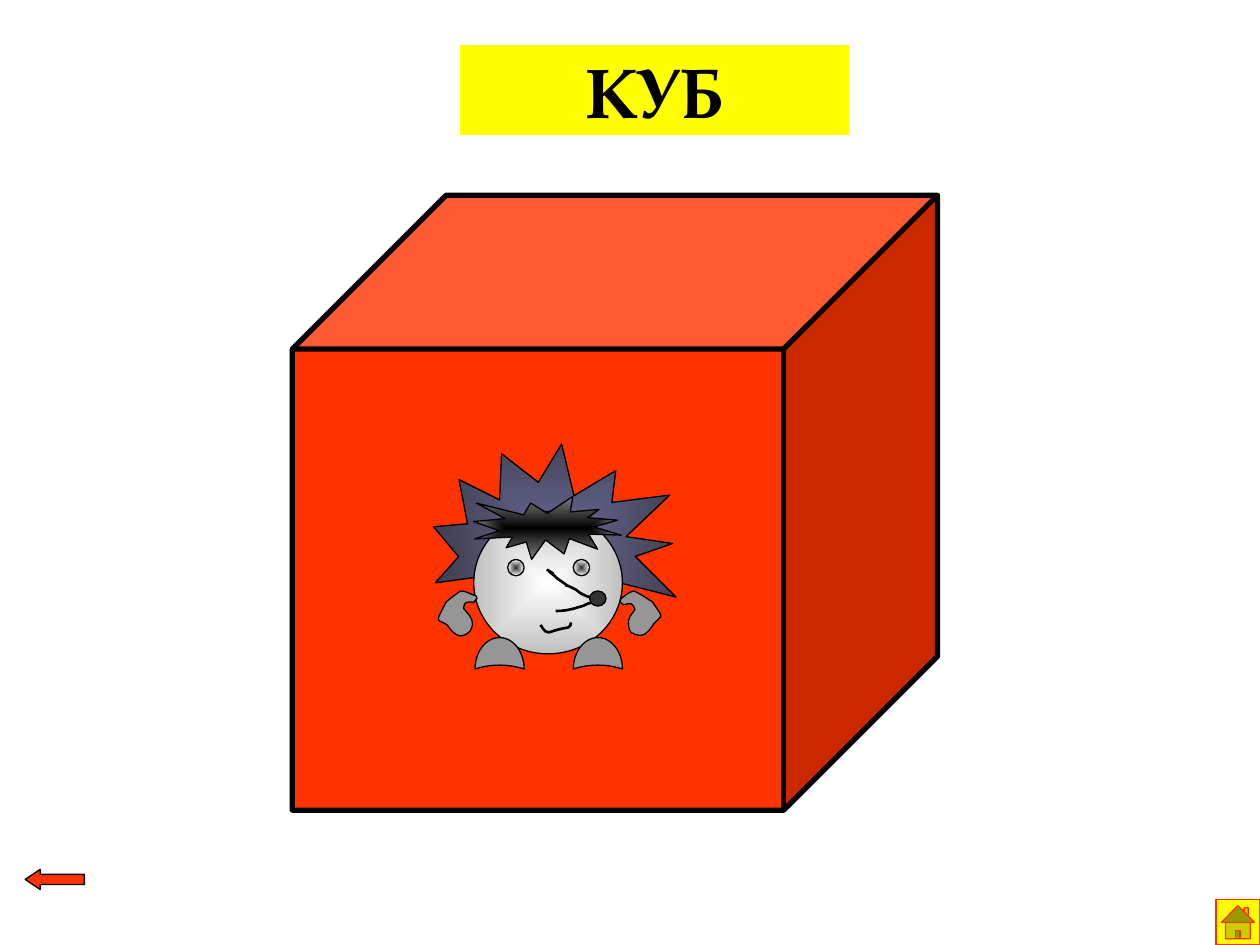
from dataclasses import dataclass
from typing import Optional

from lxml import etree
from pptx import Presentation
from pptx import util as u
from pptx.dml.color import RGBColor
from pptx.enum import shapes, text
from pptx.oxml.ns import qn

COLORS = {
    "red": "FF3300", "yellow": "FFFF00", "black": "000000", "white": "FFFFFF",
    "silver": "C0C0C0", "gray": "969696", "mid_gray": "808080",
    "charcoal": "333333", "violet": "666699",
}
FONT = "TeX Gyre Pagella"
SHAPE = shapes.MSO_SHAPE


@dataclass
class Figure:
    kind: SHAPE
    box: tuple
    fill: str
    outer: Optional[str] = None
    line: str = "black"
    width: float = 0.75
    rotation: float = 0
    adjustments: tuple = ()


@dataclass
class Curve:
    start: tuple
    segments: list
    fill: Optional[str] = None
    width: float = 1.5


def color(name: str) -> RGBColor:
    return RGBColor.from_string(COLORS[name])


def set_radial_fill(shape, inner: str, outer: str) -> None:
    shape.fill.gradient()
    gradient = shape._element.spPr.find(qn("a:gradFill"))
    for child in list(gradient):
        gradient.remove(child)
    stops = etree.SubElement(gradient, qn("a:gsLst"))
    for position, name in ((0, inner), (100000, outer)):
        stop = etree.SubElement(stops, qn("a:gs"), pos=str(position))
        etree.SubElement(stop, qn("a:srgbClr"), val=COLORS[name])
    radial = etree.SubElement(gradient, qn("a:path"), path="shape")
    etree.SubElement(radial, qn("a:fillToRect"), l="50000", t="50000", r="50000", b="50000")


def style(shape, fill: Optional[str], line: str, width: float, outer: Optional[str] = None) -> None:
    if fill is None:
        shape.fill.background()
    elif outer:
        set_radial_fill(shape, fill, outer)
    else:
        shape.fill.solid()
        shape.fill.fore_color.rgb = color(fill)
    shape.line.color.rgb = color(line)
    shape.line.width = u.Pt(width)


def draw_figure(target, figure: Figure) -> None:
    shape = target.add_shape(figure.kind, *map(u.Inches, figure.box))
    shape.shadow.inherit = False
    shape.rotation = figure.rotation
    for index, value in enumerate(figure.adjustments):
        shape.adjustments[index] = value
    style(shape, figure.fill, figure.line, figure.width, figure.outer)


def bend_lines(shape, segments: list) -> None:
    lines = list(shape._element.iter(qn("a:lnTo")))
    for line, segment in zip(lines, segments):
        bend = etree.Element(qn("a:cubicBezTo"))
        for x, y in zip(segment[::2], segment[1::2]):
            etree.SubElement(bend, qn("a:pt"), x=str(u.Inches(x) - shape.left),
                             y=str(u.Inches(y) - shape.top))
        line.getparent().replace(line, bend)


def draw_curve(target, curve: Curve) -> None:
    builder = target.build_freeform(*map(u.Inches, curve.start))
    ends = [tuple(map(u.Inches, segment[4:])) for segment in curve.segments]
    builder.add_line_segments(ends, close=curve.fill is not None)
    shape = builder.convert_to_shape()
    bend_lines(shape, curve.segments)
    shape.shadow.inherit = False
    style(shape, curve.fill, "black", curve.width)


def write_text(shape, content: str, *, size: float, font: str, ink: str, bold: bool) -> None:
    frame = shape.text_frame
    frame.word_wrap = False
    frame.auto_size = text.MSO_AUTO_SIZE.NONE
    frame.vertical_anchor = text.MSO_ANCHOR.MIDDLE
    paragraph = frame.paragraphs[0]
    paragraph.alignment = text.PP_ALIGN.CENTER
    run = paragraph.add_run()
    run.text = content
    run.font.size = u.Pt(size)
    run.font.name = font
    run.font.bold = bold
    run.font.color.rgb = color(ink)


def eye(left: float) -> Figure:
    return Figure(SHAPE.OVAL, (left, 4.44, 0.13, 0.13), "charcoal", "white")


def foot(left: float) -> Figure:
    return Figure(SHAPE.MOON, (left, 4.99, 0.25, 0.39), "gray", rotation=90, adjustments=(0.875,))


CUBE = Figure(SHAPE.CUBE, (2.32, 1.55, 5.12, 4.88), "red", width=3, adjustments=(0.25,))
BACK_ARROW = Figure(SHAPE.LEFT_ARROW, (0.2, 6.9, 0.47, 0.16), "red", adjustments=(0.5, 0.75))
HOME_BUTTON = Figure(SHAPE.ACTION_BUTTON_HOME, (9.65, 7.14, 0.35, 0.36), "yellow", line="red")

SNOUT = Curve((4.34, 4.52), [
    (4.48, 4.61, 4.27, 4.47, 4.4, 4.57), (4.41, 4.59, 4.43, 4.59, 4.45, 4.61),
    (4.58, 4.7, 4.41, 4.6, 4.55, 4.67), (4.58, 4.68, 4.6, 4.71, 4.63, 4.72),
    (4.65, 4.73, 4.67, 4.74, 4.69, 4.74), (4.73, 4.75, 4.8, 4.76, 4.8, 4.76),
    (4.73, 4.81, 4.81, 4.76, 4.67, 4.79), (4.64, 4.8, 4.62, 4.82, 4.59, 4.82),
    (4.53, 4.84, 4.47, 4.85, 4.41, 4.85)])
MOUTH = Curve((4.29, 4.96), [
    (4.36, 5.06, 4.32, 5.01, 4.51, 4.98), (4.53, 4.97, 4.53, 4.96, 4.53, 4.94)])
LEFT_ARM = Curve((3.78, 4.73), [
    (3.74, 4.72, 3.7, 4.69, 3.66, 4.69), (3.65, 4.69, 3.56, 4.76, 3.55, 4.77),
    (3.54, 4.78, 3.53, 4.79, 3.53, 4.8), (3.45, 4.95, 3.47, 4.91, 3.55, 4.96),
    (3.59, 5.02, 3.65, 5.09, 3.73, 5.01), (3.74, 4.99, 3.75, 4.97, 3.75, 4.96),
    (3.75, 4.89, 3.71, 4.87, 3.68, 4.83), (3.68, 4.82, 3.68, 4.81, 3.69, 4.79),
    (3.7, 4.77, 3.75, 4.78, 3.76, 4.78), (3.79, 4.74, 3.79, 4.76, 3.78, 4.73)], "gray", 0.75)
RIGHT_ARM = Curve((4.93, 4.75), [
    (4.96, 4.73, 4.99, 4.7, 5.03, 4.69), (5.04, 4.69, 5.14, 4.75, 5.15, 4.76),
    (5.16, 4.77, 5.18, 4.77, 5.18, 4.78), (5.28, 4.92, 5.25, 4.88, 5.19, 4.95),
    (5.15, 5.01, 5.11, 5.08, 5.01, 5.02), (5, 5.01, 4.99, 4.99, 4.99, 4.97),
    (4.98, 4.9, 5.01, 4.88, 5.04, 4.84), (5.03, 4.83, 5.04, 4.81, 5.02, 4.8),
    (5.01, 4.78, 4.96, 4.8, 4.95, 4.8), (4.91, 4.77, 4.92, 4.78, 4.93, 4.75)], "gray", 0.75)

HEDGEHOG = [
    Figure(SHAPE.EXPLOSION2, (3.5, 3.44, 1.89, 1.79), "violet", "charcoal", rotation=43.7),
    Figure(SHAPE.OVAL, (3.76, 4.06, 1.18, 1.13), "white", "silver"),
    foot(4.62),
    foot(3.84),
    eye(4.55),
    SNOUT,
    Figure(SHAPE.OVAL, (4.68, 4.69, 0.13, 0.12), "charcoal"),
    MOUTH,
    eye(4.03),
    LEFT_ARM,
    RIGHT_ARM,
    Figure(SHAPE.EXPLOSION1, (3.76, 3.94, 1.17, 0.5), "black", "mid_gray"),
]


def main() -> None:
    presentation = Presentation()
    presentation.slide_width, presentation.slide_height = u.Inches(10), u.Inches(7.5)
    slide = presentation.slides.add_slide(presentation.slide_layouts[5])

    title = slide.shapes.title
    title.left, title.top, title.width, title.height = map(u.Inches, (3.66, 0.36, 3.07, 0.71))
    style(title, "yellow", "yellow", 0.75)
    write_text(title, "КУБ", size=40, font=FONT, ink="black", bold=True)

    draw_figure(slide.shapes, CUBE)
    draw_figure(slide.shapes, BACK_ARROW)
    hedgehog = slide.shapes.add_group_shape()
    for part in HEDGEHOG:
        draw = draw_figure if isinstance(part, Figure) else draw_curve
        draw(hedgehog.shapes, part)
    draw_figure(slide.shapes, HOME_BUTTON)

    presentation.save("out.pptx")


if __name__ == "__main__":
    main()
